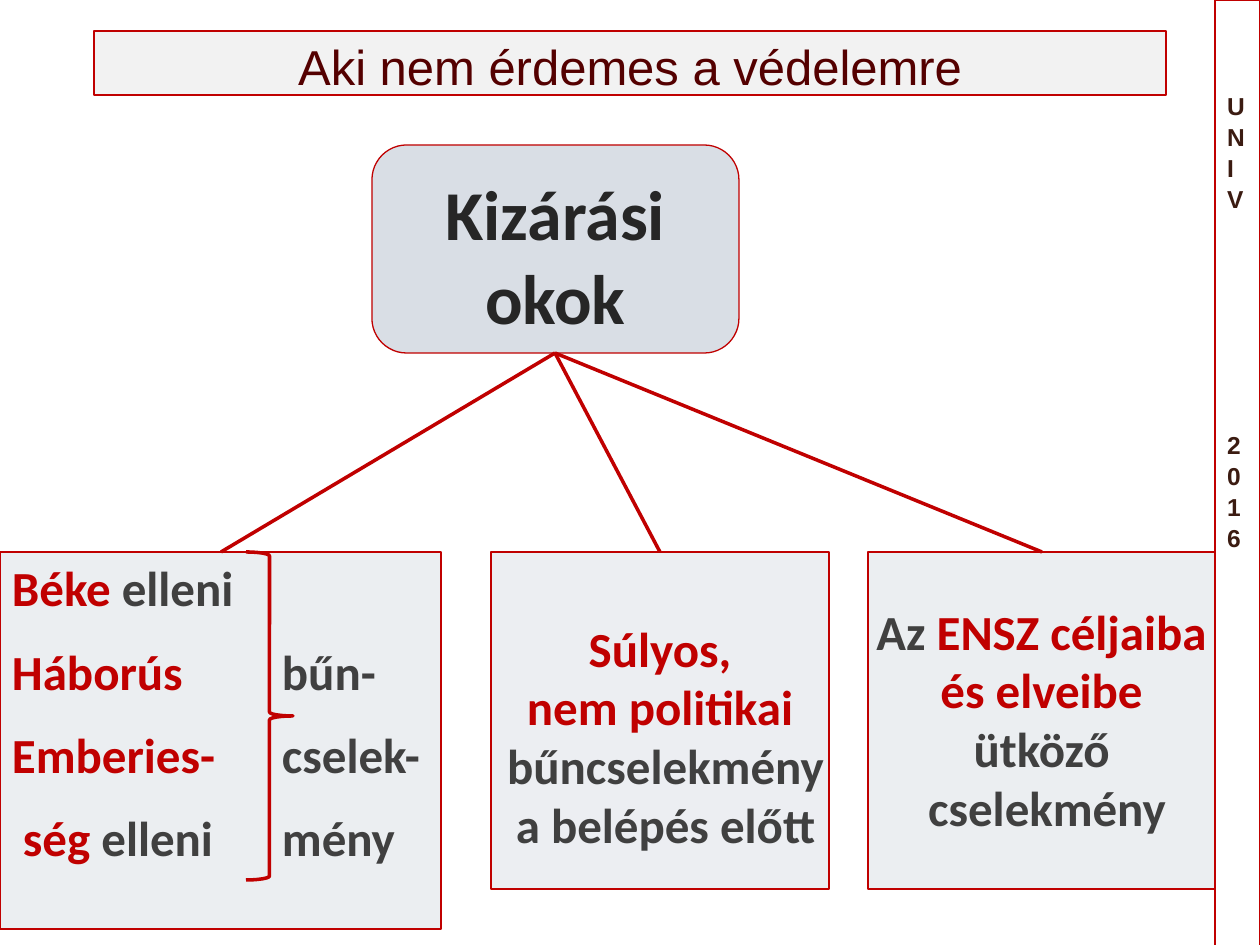
from lxml import etree
from pptx import Presentation
from pptx.dml.color import RGBColor
from pptx.enum.shapes import MSO_CONNECTOR, MSO_SHAPE
from pptx.enum.text import MSO_ANCHOR, PP_ALIGN
from pptx.oxml.ns import qn
from pptx.util import Emu, Inches, Pt

RECT = MSO_SHAPE.RECTANGLE
PROCESS = MSO_SHAPE.FLOWCHART_PROCESS
ROUNDED = MSO_SHAPE.FLOWCHART_ALTERNATE_PROCESS
BRACE = MSO_SHAPE.RIGHT_BRACE
STRAIGHT = MSO_CONNECTOR.STRAIGHT
TOP, MIDDLE = MSO_ANCHOR.TOP, MSO_ANCHOR.MIDDLE
LEFT, CENTER = PP_ALIGN.LEFT, PP_ALIGN.CENTER

RED = RGBColor(0xC0, 0x00, 0x00)
GREY = RGBColor(0x40, 0x40, 0x40)
DARK = RGBColor(0x26, 0x26, 0x26)
BROWN = RGBColor(0x3B, 0x1B, 0x11)
MAROON = RGBColor(0x54, 0x00, 0x00)
WHITE = RGBColor(0xFF, 0xFF, 0xFF)
PALE = RGBColor(0xF2, 0xF2, 0xF2)
BLUE_GREY = RGBColor(0xD9, 0xDE, 0xE5)

PX_PER_INCH = 126


def px(length):
    return Emu(round(length * Inches(1) / PX_PER_INCH))


def add_panel(slide, kind, box, fill=None, line_pt=0.75, opacity=100):
    panel = slide.shapes.add_shape(kind, *map(px, box))
    panel.shadow.inherit = False
    panel.line.color.rgb = RED
    panel.line.width = Pt(line_pt)
    if fill is None:
        panel.fill.background()
        return panel
    panel.fill.solid()
    panel.fill.fore_color.rgb = fill
    if opacity < 100:
        color = panel.fill._xPr.find(qn("a:solidFill"))[0]
        etree.SubElement(color, qn("a:alpha"), val=str(opacity * 1000))
    return panel


def write(shape, lines, size, font="Calibri", bold=True, align=CENTER,
          anchor=TOP, side=0, top=6, gap=0):
    frame = shape.text_frame
    frame.word_wrap = True
    frame.vertical_anchor = anchor
    frame.margin_left = frame.margin_right = px(side)
    frame.margin_top, frame.margin_bottom = px(top), 0
    for index, line in enumerate(lines):
        paragraph = frame.add_paragraph() if index else frame.paragraphs[0]
        paragraph.alignment = align
        paragraph.space_before = Pt(gap if index else 0)
        for text, color in line:
            run = paragraph.add_run()
            run.text = text
            run.font.size = Pt(size)
            run.font.name = font
            run.font.bold = bold
            run.font.color.rgb = color
    return frame


def add_side_strip(slide, box):
    left, top, width, _ = box
    add_panel(slide, RECT, box, WHITE, 1.25)
    for label, offset in (("UNIV", 90), ("2016", 429)):
        column = slide.shapes.add_textbox(
            *map(px, (left, top + offset, width, 120)))
        frame = write(column, [[(label, BROWN)]], 14, "Arial",
                      align=LEFT, side=12, top=0)
        frame.paragraphs[0].line_spacing = 1.05


def add_title(slide, box):
    write(add_panel(slide, RECT, box, PALE),
          [[("Aki nem érdemes a védelemre", MAROON)]],
          28, "Arial", bold=False, anchor=MIDDLE)


def add_root(slide, box):
    left, top, width, height = box
    add_panel(slide, ROUNDED, box, BLUE_GREY)
    heading = slide.shapes.add_textbox(
        *map(px, (left, top + 20, width, height - 26)))
    write(heading, [[("Kizárási okok", DARK)]], 40, side=60)


def add_crimes(slide, box):
    left, top, _, _ = box
    crimes = [
        [("Béke ", RED), ("elleni", GREY)],
        [("Háborús", RED), ("\tbűn-", GREY)],
        [("Emberies-", RED), ("\tcselek-", GREY)],
        [(" ség", RED), (" elleni\tmény", GREY)],
    ]
    panel = add_panel(slide, PROCESS, box, BLUE_GREY, opacity=51)
    frame = write(panel, crimes, 28, align=LEFT, side=12, gap=14)
    for paragraph in frame.paragraphs:
        tabs = etree.SubElement(paragraph._p.get_or_add_pPr(), qn("a:tabLst"))
        etree.SubElement(tabs, qn("a:tab"), pos=str(px(270)), algn="l")
    add_panel(slide, BRACE, (left + 246, top, 47, 328), line_pt=2)


def add_reason(slide, box, lines, top, opacity):
    panel = add_panel(slide, RECT, box, BLUE_GREY, opacity=opacity)
    write(panel, lines, 28, top=top)


def add_branches(slide, start, ends):
    for end in ends:
        branch = slide.shapes.add_connector(
            STRAIGHT, *map(px, (*start, *end)))
        branch.line.color.rgb = RED
        branch.line.width = Pt(2)
        etree.SubElement(branch._element.spPr, qn("a:effectLst"))


def main():
    deck = Presentation()
    deck.slide_width, deck.slide_height = Inches(10), Inches(7.5)
    slide = deck.slides.add_slide(deck.slide_layouts[6])

    row_top = 552
    root = (372, 145, 367, 208)
    add_side_strip(slide, (1215, 0, 45, 982))
    add_crimes(slide, (0, row_top, 441, 377))
    add_reason(slide, (491, row_top, 338, 337), [
        [("Súlyos,", RED)],
        [("nem politikai", RED)],
        [(" bűncselekmény", GREY)],
        [(" a belépés előtt", GREY)],
    ], 66, 49)
    add_reason(slide, (868, row_top, 347, 337), [
        [("Az ", GREY), ("ENSZ céljaiba", RED)],
        [("és elveibe", RED)],
        [("ütköző", GREY)],
        [(" cselekmény", GREY)],
    ], 49, 51)
    add_root(slide, root)
    root_foot = (root[0] + root[2] // 2, root[1] + root[3])
    add_branches(slide, root_foot,
                 [(center, row_top) for center in (221, 660, 1042)])
    add_title(slide, (94, 31, 1072, 64))
    deck.save("out.pptx")


if __name__ == "__main__":
    main()
